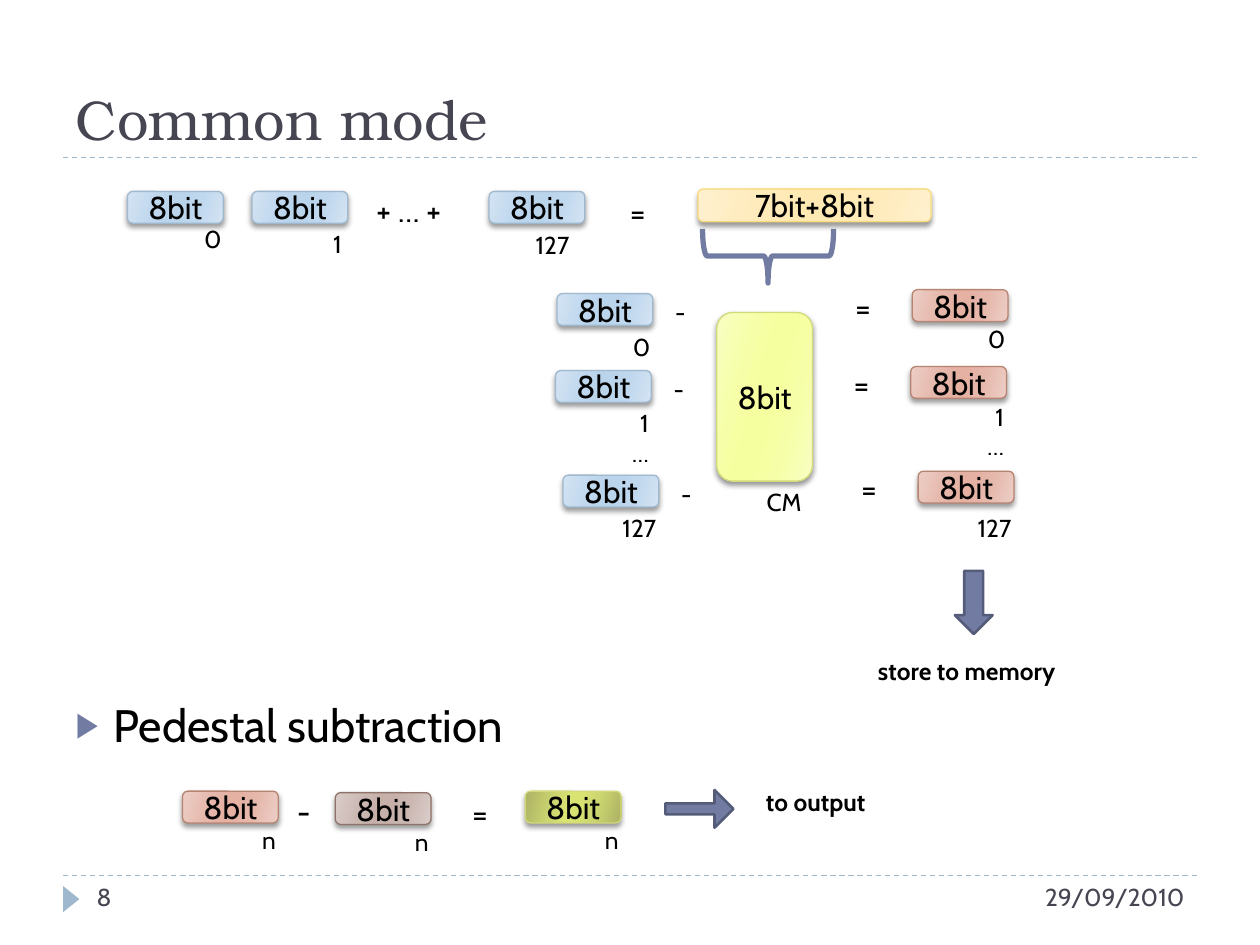
from typing import NamedTuple
from lxml.etree import SubElement
from pptx import Presentation
from pptx.dml.color import RGBColor
from pptx.enum.dml import MSO_LINE
from pptx.enum.shapes import MSO_CONNECTOR, MSO_SHAPE as Preset
from pptx.enum.text import MSO_ANCHOR as Anchor, MSO_AUTO_SIZE as AutoSize, PP_ALIGN as Align
from pptx.oxml.ns import qn
from pptx.util import Cm, Pt

BLACK = RGBColor(0x00, 0x00, 0x00)
SLATE = RGBColor(0x46, 0x46, 0x53)
MIST = RGBColor(0x9F, 0xB8, 0xCD)
INDIGO = RGBColor(0x72, 0x7C, 0xA3)
DARK_INDIGO = RGBColor(0x54, 0x5C, 0x79)
BODY_FONT = "Cabin"
TITLE_FONT = "TeX Gyre Bonum"


class Palette(NamedTuple):
    edge: RGBColor
    between: RGBColor
    middle: RGBColor
    line: RGBColor


def palette(*codes):
    return Palette(*(RGBColor.from_string(code) for code in codes))


BLUE = palette("D3E3F2", "C0D8EE", "BAD4EC", "9FB8CD")
AMBER = palette("FFF0CF", "FFEBBA", "FFE9B3", "FADA7A")
LEMON = palette("F8FEC2", "F6FFA7", "F6FF9F", "D2DA7A")
ROSE = palette("ECCEC6", "E6B8AC", "E4B1A3", "B88472")
TAUPE = palette("DACDCA", "CBB7B2", "C6B0A9", "8E736A")
OLIVE = palette("ACB264", "CCD570", "D9E371", "D2DA7A")

CHIP_WIDTH, CHIP_HEIGHT = 1.93, 0.64
INDEX_OVERHANG = 0.2


class Box(NamedTuple):
    left: float
    top: float
    width: float
    height: float

    def inner(self, left, top, width, height):
        return Box(self.left + left, self.top + top, width, height)

    def lengths(self):
        return [Cm(value) for value in self]


def style(para, size, color=BLACK, bold=False, name=BODY_FONT):
    para.font.size = Pt(size)
    para.font.name = name
    para.font.bold = bold
    para.font.color.rgb = color


def add_label(page, box, text, size=14, align=Align.LEFT, color=BLACK, bold=False):
    frame = page.shapes.add_textbox(*box.lengths()).text_frame
    frame.word_wrap = True
    frame.text = text
    for para in frame.paragraphs:
        para.alignment = align
        style(para, size, color, bold)


def add_operator(page, box, text):
    add_label(page, box, text, 18)


def add_index(page, chip, text, drop=0.56, overhang=INDEX_OVERHANG):
    box = chip.inner(0, drop, chip.width + overhang, 0.86)
    add_label(page, box, text, align=Align.RIGHT)


def add_shape(page, preset, box, line, weight, fill=None, rotation=0):
    shape = page.shapes.add_shape(preset, *box.lengths())
    shape.rotation = rotation
    shape.shadow.inherit = False
    shape.line.color.rgb = line
    shape.line.width = Pt(weight)
    if fill is None:
        shape.fill.background()
    else:
        shape.fill.solid()
        shape.fill.fore_color.rgb = fill
    return shape


def add_color(parent, tag, color):
    element = SubElement(parent, qn(tag), val=str(color))
    return element


def add_chip(page, box, colors, text="8bit"):
    shape = add_shape(page, Preset.ROUNDED_RECTANGLE, box, colors.line, 0.75)
    shape.fill.gradient()
    shape.fill.gradient_angle = 344
    properties = shape._element.spPr
    stops = properties.find(qn("a:gradFill")).find(qn("a:gsLst"))
    for stop in list(stops):
        stops.remove(stop)
    ramp = (colors.edge, colors.between, colors.middle)
    for place, color in zip((0, 30, 45, 55, 73, 100), ramp + ramp[::-1]):
        stop = SubElement(stops, qn("a:gs"), pos=str(place * 1000))
        add_color(stop, "a:srgbClr", color)
    shadow = SubElement(properties.find(qn("a:effectLst")), qn("a:outerShdw"),
                        blurRad=str(Pt(3)), dist=str(Pt(2)), dir="5400000", rotWithShape="0")
    SubElement(add_color(shadow, "a:srgbClr", BLACK), qn("a:alpha"), val="40000")
    frame = shape.text_frame
    frame.text = text
    frame.vertical_anchor = Anchor.MIDDLE
    frame.paragraphs[0].alignment = Align.CENTER
    style(frame.paragraphs[0], 18)


def add_frame(page, box):
    for top in (0, box.height):
        line = page.shapes.add_connector(
            MSO_CONNECTOR.STRAIGHT, Cm(box.left), Cm(box.top + top),
            Cm(box.left + box.width), Cm(box.top + top))
        line.line.color.rgb = MIST
        line.line.width = Pt(0.75)
        line.line.dash_style = MSO_LINE.DASH
        SubElement(line._element.spPr, qn("a:effectLst"))
    marker = add_shape(page, Preset.ISOSCELES_TRIANGLE,
                       box.inner(-0.1, box.height + 0.31, 0.53, 0.33), MIST, 0.75, MIST, 90)
    marker.line.fill.background()
    add_label(page, box.inner(0.43, box.height, 5.5, 1.02), "8", color=SLATE)
    add_label(page, box.inner(box.width - 6.35, box.height, 6.35, 1.02), "29/09/2010",
              align=Align.RIGHT, color=SLATE)


def fill_placeholder(shape, box, text):
    shape.left, shape.top, shape.width, shape.height = box.lengths()
    frame = shape.text_frame
    frame.text = text
    frame.auto_size = AutoSize.NONE
    return frame


def fill_title(page, box):
    frame = fill_placeholder(page.shapes.title, box, "Common mode")
    frame.vertical_anchor = Anchor.BOTTOM
    frame.paragraphs[0].alignment = Align.LEFT
    style(frame.paragraphs[0], 32, SLATE, name=TITLE_FONT)


def fill_list(page, box):
    frame = fill_placeholder(page.placeholders[1], box, "Pedestal subtraction")
    para = frame.paragraphs[0]
    layout = para._p.get_or_add_pPr()
    layout.set("marL", str(Cm(0.76)))
    layout.set("indent", str(Cm(-0.76)))
    add_color(SubElement(layout, qn("a:buClr")), "a:srgbClr", INDIGO)
    SubElement(layout, qn("a:buSzPct"), val="76000")
    SubElement(layout, qn("a:buChar"), char="▶")
    para.space_before = Pt(0)
    style(para, 26)


def add_sum(page, box):
    for left, text, drop, overhang in ((0, "0", 0.53, 0.22), (2.51, "1", 0.64, 0.13),
                                       (7.29, "127", 0.66, -0.06)):
        chip = box.inner(left, 0, CHIP_WIDTH, CHIP_HEIGHT)
        add_chip(page, chip, BLUE)
        add_index(page, chip, text, drop, overhang)
    add_operator(page, box.inner(4.77, -0.13, 2.26, 1.02), "+ … +")
    add_operator(page, box.inner(9.88, -0.1, 0.89, 1.02), "=")
    add_chip(page, box.inner(11.5, -0.05, 4.7, 0.66), AMBER, "7bit+8bit")


def add_common_mode(page, box):
    add_shape(page, Preset.LEFT_BRACE, box.inner(0.49, -2.46, 1.09, 2.64), INDIGO, 3, rotation=270)
    add_chip(page, box, LEMON)
    add_label(page, box.inner(0.4, box.height, 1.56, 0.86), "CM", align=Align.RIGHT)


def add_difference(page, box, text, result_drop):
    source = box.inner(0, 0, CHIP_WIDTH, CHIP_HEIGHT)
    result = box.inner(box.width - CHIP_WIDTH, -0.08, CHIP_WIDTH, CHIP_HEIGHT)
    add_chip(page, source, BLUE)
    add_index(page, source, text, CHIP_HEIGHT)
    add_label(page, source.inner(2.13, -0.05, 1.05, 0.86), "-")
    add_operator(page, result.inner(-1.4, -0.16, 0.89, 1.02), "=")
    add_chip(page, result, ROSE)
    add_index(page, result, text, result_drop)


def add_store(page, box):
    add_shape(page, Preset.DOWN_ARROW, box.inner(1.8, 0, 0.76, 1.27), DARK_INDIGO, 1.5, INDIGO)
    add_label(page, box.inner(0, 1.6, box.width, 0.86), "store to memory", bold=True)


def add_pedestal(page, box):
    for left, top, colors in ((0, 0, ROSE), (3.08, 0.03, TAUPE), (6.91, 0, OLIVE)):
        chip = box.inner(left, top, CHIP_WIDTH, CHIP_HEIGHT)
        add_chip(page, chip, colors)
        add_index(page, chip, "n")
    add_operator(page, box.inner(2.06, -0.1, 0.74, 1.02), "-")
    add_operator(page, box.inner(5.59, -0.07, 0.89, 1.02), "=")
    arrow = add_shape(page, Preset.DOWN_ARROW, box.inner(10.04, -0.33, 0.76, 1.37),
                      DARK_INDIGO, 1.5, INDIGO, 270)
    arrow.adjustments[0] = 0.29
    add_label(page, box.inner(11.51, -0.2, 4.67, 0.86), "to output", bold=True)


def main():
    deck = Presentation()
    deck.slide_width, deck.slide_height = Cm(25.4), Cm(19.05)
    page = deck.slides.add_slide(deck.slide_layouts[1])
    add_frame(page, Box(1.27, 3.18, 22.86, 14.47))
    fill_title(page, Box(1.27, 0.43, 22.86, 2.75))
    add_sum(page, Box(2.57, 3.86, 16.2, CHIP_HEIGHT))
    add_common_mode(page, Box(14.45, 6.3, CHIP_WIDTH, 3.4))
    for left, top, text, drop in ((11.23, 5.92, "0", 0.56), (11.2, 7.47, "1\n…", 0.58),
                                  (11.35, 9.58, "127", 0.71)):
        add_difference(page, Box(left, top, 9.09, CHIP_HEIGHT), text, drop)
    add_store(page, Box(17.45, 11.51, 4.67, 2.46))
    add_pedestal(page, Box(3.68, 15.95, 16.18, CHIP_HEIGHT))
    fill_list(page, Box(1.27, 13.92, 22.86, 1.47))
    deck.save("out.pptx")


if __name__ == "__main__":
    main()
